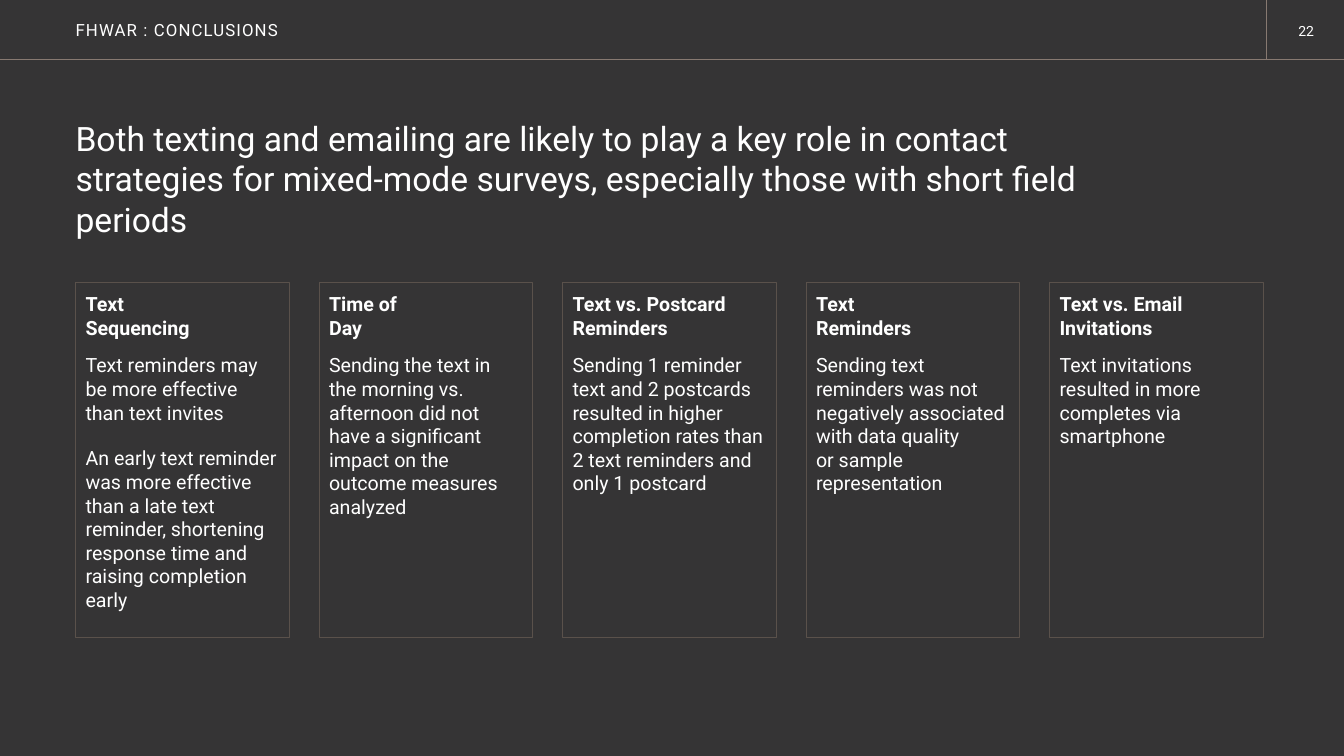
from pptx import Presentation
from pptx.dml.color import RGBColor
from pptx.enum.shapes import MSO_CONNECTOR as CONN, MSO_SHAPE as SHAPE
from pptx.enum.text import MSO_ANCHOR as ANCHOR, PP_ALIGN as ALIGN
from pptx.oxml.ns import qn
from pptx.util import Inches, Pt
from lxml.etree import SubElement


def color(hex_code):
    return RGBColor.from_string(hex_code)


class Deck:
    """Holds the slide style and draws each kind of element."""

    FONT, WHITE, BACK = "Roboto", "FFFFFF", "353435"
    RULE, BORDER = "877971", "5A514B"

    def __init__(self):
        self.prs = Presentation()
        self.prs.slide_width, self.prs.slide_height = Inches(13.33), Inches(7.5)
        self.s = self.prs.slides.add_slide(self.prs.slide_layouts[6])
        fill = self.s.background.fill
        fill.solid()
        fill.fore_color.rgb = color(self.BACK)

    def frame(self, sp, insets, anchor=ANCHOR.TOP):
        tf = sp.text_frame
        tf.word_wrap = True
        tf.vertical_anchor = anchor
        tf.margin_left, tf.margin_top, tf.margin_right, tf.margin_bottom = map(Inches, insets)
        return tf

    def add_text(self, p, text, size, bold=False, align=ALIGN.LEFT, spacing=0):
        p.alignment = align
        for i, line in enumerate(text.split("\n")):
            if i:
                p.add_line_break()
            r = p.add_run()
            r.text = line
            r.font.name, r.font.size, r.font.bold = self.FONT, Pt(size), bold
            r.font.color.rgb = color(self.WHITE)
            if spacing:
                r._r.get_or_add_rPr().set("spc", str(spacing))

    def text_box(self, box, text, size, insets=(0, 0, 0, 0), anchor=ANCHOR.TOP, **style):
        sp = self.s.shapes.add_textbox(*map(Inches, box))
        self.add_text(self.frame(sp, insets, anchor).paragraphs[0], text, size, **style)

    def rule(self, *ends):
        c = self.s.shapes.add_connector(CONN.STRAIGHT, *map(Inches, ends))
        c.line.color.rgb = color(self.RULE)
        c.line.width = Pt(0.65)
        SubElement(c._element.spPr, qn("a:effectLst"))

    def card(self, box, heading, points):
        sp = self.s.shapes.add_shape(SHAPE.RECTANGLE, *map(Inches, box))
        sp.shadow.inherit = False
        sp.fill.background()
        sp.line.color.rgb = color(self.BORDER)
        sp.line.width = Pt(0.75)
        tf = self.frame(sp, (0.1, 0.1, 0.1, 0.05))
        self.add_text(tf.paragraphs[0], heading, 14, bold=True)
        for point in points:
            p = tf.add_paragraph()
            p.space_before, p.space_after = Pt(10), Pt(6)
            self.add_text(p, point, 14)


CARDS = [
    ("Text \nSequencing", [
        "Text reminders may be more effective than text invites",
        "An early text reminder was more effective than a late text reminder, "
        "shortening response time and raising completion early"]),
    ("Time of \nDay", [
        "Sending the text in the morning vs. afternoon did not have a significant "
        "impact on the outcome measures analyzed"]),
    ("Text vs. Postcard Reminders", [
        "Sending 1 reminder text and 2 postcards resulted in higher completion "
        "rates than 2 text reminders and only 1 postcard"]),
    ("Text \nReminders", [
        "Sending text reminders was not negatively associated with data quality \n"
        "or sample representation"]),
    ("Text vs. Email Invitations", [
        "Text invitations resulted in more completes via smartphone"]),
]


def main():
    deck = Deck()
    left, right, width = 0.75, 12.53, 2.12
    deck.text_box((12.49, 0.17, 0.64, 0.27), "22", 10, (0.1, 0.05, 0.1, 0.05), align=ALIGN.RIGHT)
    deck.rule(0, 0.59, 13.33, 0.59)
    deck.rule(12.56, 0, 12.56, 0.59)
    deck.text_box((left, 0, 8.19, 0.6), "FHWAR : CONCLUSIONS", 12,
                  anchor=ANCHOR.MIDDLE, spacing=80)
    deck.text_box((left, 1.17, 10.7, 1),
                  "Both texting and emailing are likely to play a key role in contact strategies "
                  "for mixed-mode surveys, especially those with short field periods", 24)
    step = (right - left - width) / (len(CARDS) - 1)
    for i, (heading, points) in enumerate(CARDS):
        deck.card((left + i * step, 2.8, width, 3.53), heading, points)
    deck.prs.save("out.pptx")


if __name__ == "__main__":
    main()
